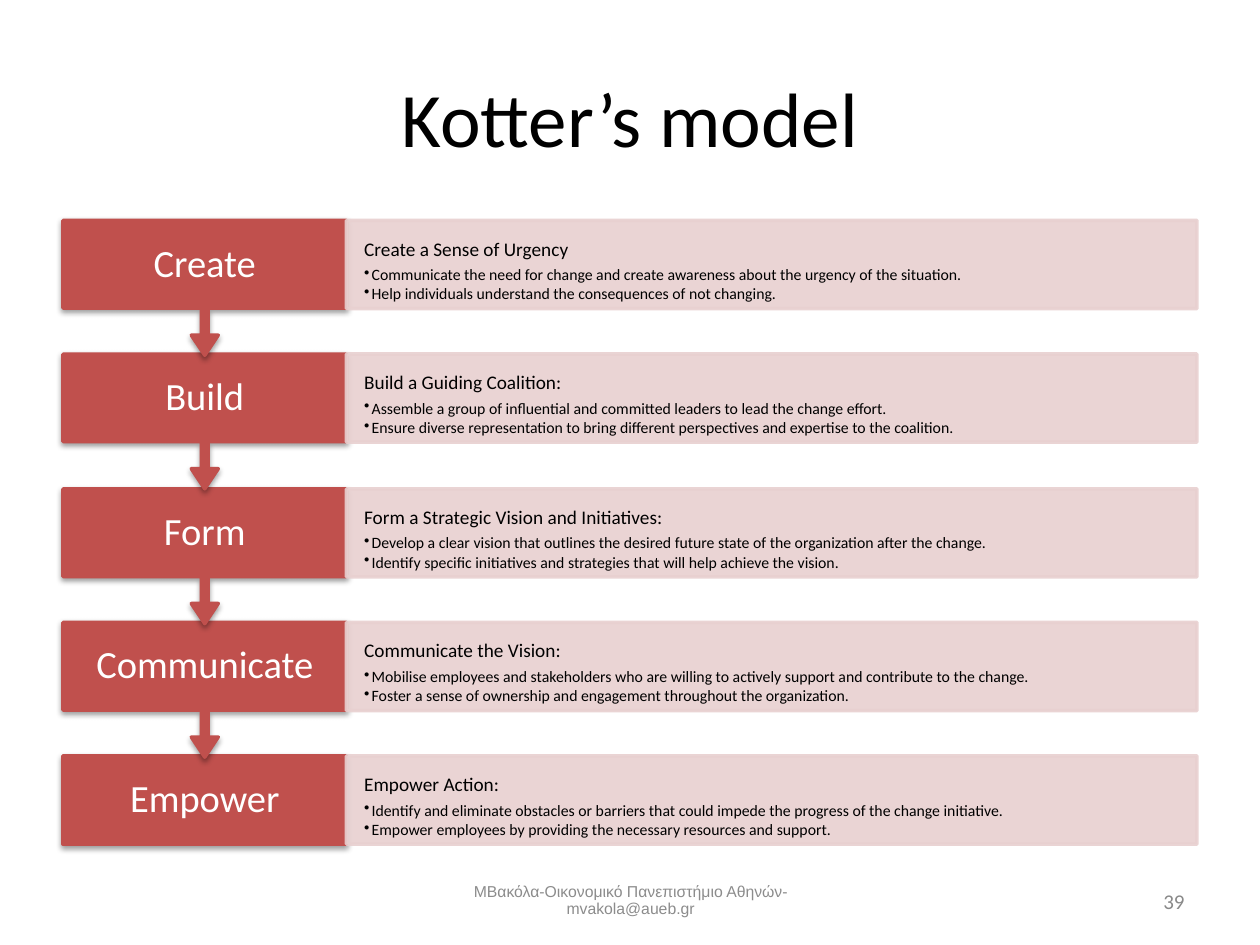
import pptx
import pptx.util
import pptx.dml.color
import pptx.enum.shapes
import pptx.enum.text
import pptx.oxml
import pptx.oxml.ns

RGB = pptx.dml.color.RGBColor
Pt = pptx.util.Pt
Kind = pptx.enum.shapes.MSO_SHAPE
Align = pptx.enum.text.PP_ALIGN
Anchor = pptx.enum.text.MSO_ANCHOR

RED = RGB(0xC0, 0x50, 0x4D)
PINK = RGB(0xE8, 0xD0, 0xD0)
BLACK = RGB(0, 0, 0)
WHITE = RGB(255, 255, 255)
GREY = RGB(0x8C, 0x8C, 0x8C)
PALE = RGB(0x89, 0x89, 0x89)

SCALE = 9144
LEFT, TOP, HIGH, PITCH = 50, 175, 70, 106.25
STEP_W, BODY_W, CALL_H = 225, 675, 107
NS = pptx.oxml.ns.nsdecls("a")
SHADOW = (f'<a:outerShdw {NS} blurRad="40000" dist="20000" dir="5400000" '
          'rotWithShape="0"><a:srgbClr val="000000"><a:alpha val="38000"/>'
          '</a:srgbClr></a:outerShdw>')

STEPS = [
    ("Create", "Create a Sense of Urgency",
     "Communicate the need for change and create awareness about the urgency of the situation.",
     "Help individuals understand the consequences of not changing."),
    ("Build", "Build a Guiding Coalition:",
     "Assemble a group of influential and committed leaders to lead the change effort.",
     "Ensure diverse representation to bring different perspectives and expertise to the coalition."),
    ("Form", "Form a Strategic Vision and Initiatives:",
     "Develop a clear vision that outlines the desired future state of the organization after the change.",
     "Identify specific initiatives and strategies that will help achieve the vision."),
    ("Communicate", "Communicate the Vision:",
     "Mobilise employees and stakeholders who are willing to actively support and contribute to the change.",
     "Foster a sense of ownership and engagement throughout the organization."),
    ("Empower", "Empower Action:",
     "Identify and eliminate obstacles or barriers that could impede the progress of the change initiative.",
     "Empower employees by providing the necessary resources and support."),
]


def px(num):
    return round(num * SCALE)


def apply(item, vals):
    for name, val in vals.items():
        setattr(item, name, val)


def frame(shape, anchor, side=10, edge=5):
    apply(shape.text_frame, {
        "word_wrap": True, "vertical_anchor": anchor,
        "margin_left": px(side), "margin_right": px(side),
        "margin_top": px(edge), "margin_bottom": px(edge)})
    return shape.text_frame


def write(para, text, size, color, face="Calibri", **form):
    apply(para, form)
    run = para.add_run()
    run.text = text
    apply(run.font, {"size": Pt(size), "name": face})
    run.font.color.rgb = color


def bullet(para, text):
    props = para._p.get_or_add_pPr()
    for name, val in {"marL": px(6), "indent": px(-6), "lvl": 1}.items():
        props.set(name, str(val))
    props.append(pptx.oxml.parse_xml(f'<a:buChar {NS} char="•"/>'))
    write(para, text, 9, BLACK, line_spacing=0.9, space_after=Pt(1.35))


def label(slide, area, text, size, color, face="Calibri", **form):
    box = slide.shapes.add_textbox(*map(px, area))
    write(frame(box, Anchor.MIDDLE).paragraphs[0], text, size, color, face, **form)


def block(slide, kind, area, color):
    shape = slide.shapes.add_shape(kind, *map(px, area))
    shape.shadow.inherit = False
    for fill in (shape.fill, shape.line.fill):
        fill.solid()
        fill.fore_color.rgb = color
    shape.line.width = Pt(2)
    return shape


def shade(shape):
    shape._element.spPr.find(pptx.oxml.ns.qn("a:effectLst")).append(
        pptx.oxml.parse_xml(SHADOW))


def fade(shape):
    for color in shape._element.spPr.iter(pptx.oxml.ns.qn("a:srgbClr")):
        color.append(pptx.oxml.parse_xml(f'<a:alpha {NS} val="90000"/>'))


def step(slide, top, name, last):
    area = (LEFT, top, STEP_W, HIGH)
    if last:
        shape = block(slide, Kind.RECTANGLE, area, RED)
        box = shape
    else:
        shape = block(slide, Kind.UP_ARROW_CALLOUT, (LEFT, top, STEP_W, CALL_H), RED)
        shape.rotation = 180
        for i, val in enumerate((0.05, 0.1, 0.15, 0.65)):
            shape.adjustments[i] = val
        box = slide.shapes.add_textbox(*map(px, area))
    shade(shape)
    write(frame(box, Anchor.MIDDLE, 16, 17).paragraphs[0], name, 22, WHITE,
          alignment=Align.CENTER, line_spacing=0.9)


def body(slide, top, head, points):
    shape = block(slide, Kind.RECTANGLE, (LEFT + STEP_W, top, BODY_W, HIGH), PINK)
    fade(shape)
    text = frame(shape, Anchor.TOP, 14, 15)
    write(text.paragraphs[0], head, 11, BLACK, alignment=Align.LEFT,
          line_spacing=0.9, space_after=Pt(3.85))
    for point in points:
        para = text.add_paragraph()
        para.alignment = Align.LEFT
        bullet(para, point)


def main():
    deck = pptx.Presentation()
    apply(deck, {"slide_width": px(1000), "slide_height": px(750)})
    slide = deck.slides.add_slide(deck.slide_layouts[6])
    label(slide, (50, 30, 900, 125), "Kotter’s model", 44, BLACK,
          alignment=Align.CENTER)
    label(slide, (342, 695, 317, 40),
          "ΜΒακόλα-Οικονομικό Πανεπιστήμιο Αθηνών-mvakola@aueb.gr", 9, GREY,
          "Arial", alignment=Align.CENTER, line_spacing=0.9)
    label(slide, (717, 695, 233, 40), "39", 12, PALE, alignment=Align.RIGHT)
    final = len(STEPS) - 1
    for i in range(final, -1, -1):
        name, head, *points = STEPS[i]
        top = round(TOP + i * PITCH)
        step(slide, top, name, i == final)
        body(slide, top, head, points)
    deck.save("out.pptx")


if __name__ == "__main__":
    main()
